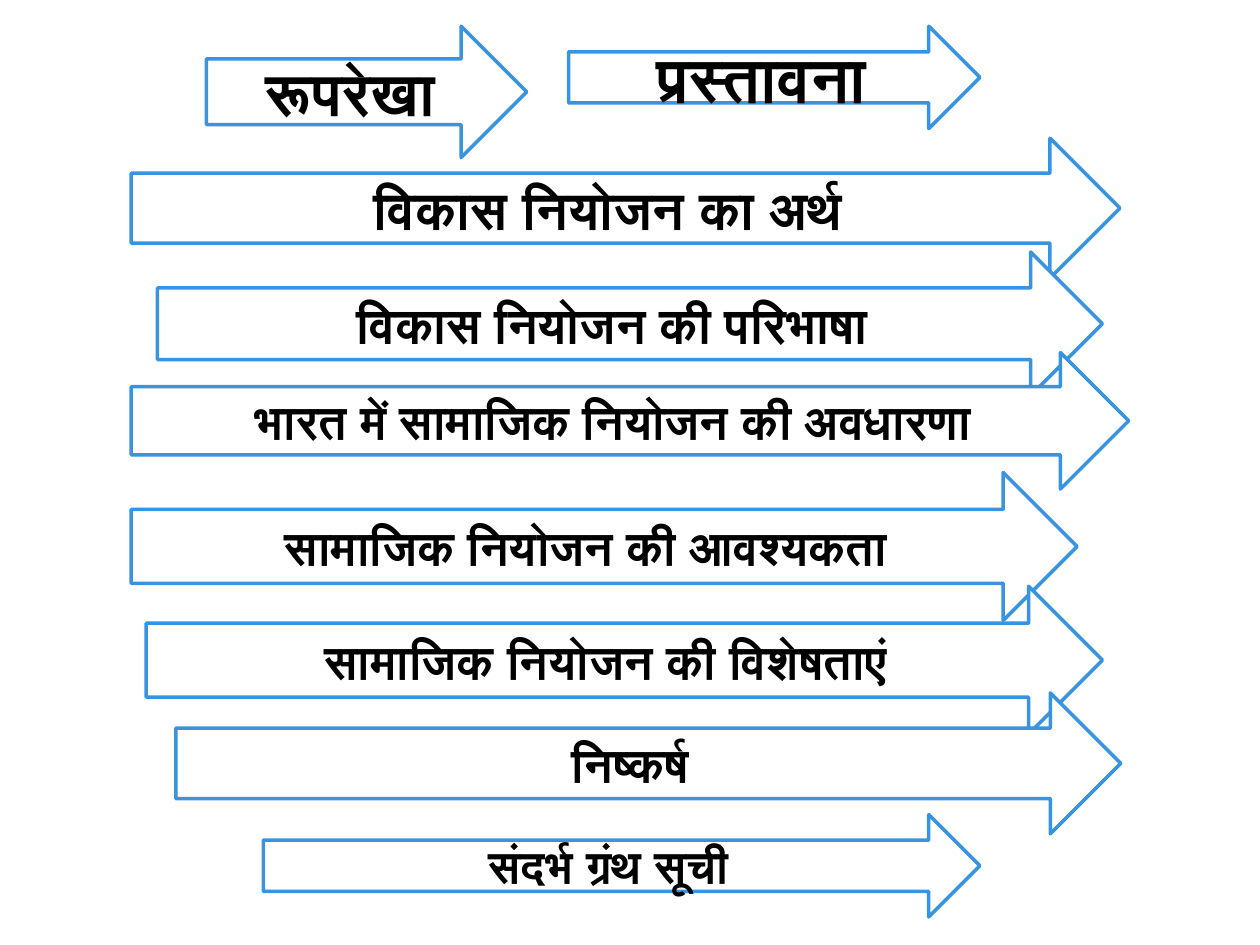
import pptx
import pptx.util
import pptx.dml.color
import pptx.enum.shapes
import pptx.enum.text

Pt = pptx.util.Pt


def colour(value):
    return pptx.dml.color.RGBColor.from_string(value)


deck = pptx.Presentation()
deck.slide_width = Pt(720)
deck.slide_height = Pt(540)
page = deck.slides.add_slide(deck.slide_layouts[6])

# Outline topics: text, size, left, top, width, height
topics = [
    ("रूपरेखा", 34, 118, 15, 183, 75),
    ("प्रस्तावना", 36, 325, 15, 235, 58.5),
    ("विकास नियोजन का अर्थ", 30, 75, 79, 565, 80),
    ("विकास नियोजन की परिभाषा", 28, 90, 144, 540, 82),
    ("भारत में सामाजिक नियोजन की अवधारणा", 27, 75, 201.5, 570, 78),
    ("सामाजिक नियोजन की आवश्यकता", 27, 75, 270, 540.5, 84.5),
    ("सामाजिक नियोजन की विशेषताएं", 27, 83.5, 335, 546.5, 84.5),
    ("निष्कर्ष", 27, 100.5, 396, 540, 80.5),
    ("संदर्भ ग्रंथ सूची", 26, 150.5, 465.5, 409.5, 58.5),
]

# One outlined arrow per topic, later ones on top
for text, size, left, top, width, height in topics:
    arrow = page.shapes.add_shape(
        pptx.enum.shapes.MSO_SHAPE.RIGHT_ARROW,
        Pt(left), Pt(top), Pt(width), Pt(height))
    arrow.shadow.inherit = False
    arrow.fill.solid()
    arrow.fill.fore_color.rgb = colour("FFFFFF")
    arrow.line.color.rgb = colour("3893E0")
    arrow.line.width = Pt(2)

    # Centred bold label
    frame = arrow.text_frame
    frame.word_wrap = True
    frame.vertical_anchor = pptx.enum.text.MSO_ANCHOR.MIDDLE
    para = frame.paragraphs[0]
    para.alignment = pptx.enum.text.PP_ALIGN.CENTER
    span = para.add_run()
    span.text = text
    span.font.name = "Calibri"
    span.font.size = Pt(size)
    span.font.bold = True
    span.font.color.rgb = colour("000000")

deck.save("out.pptx")
